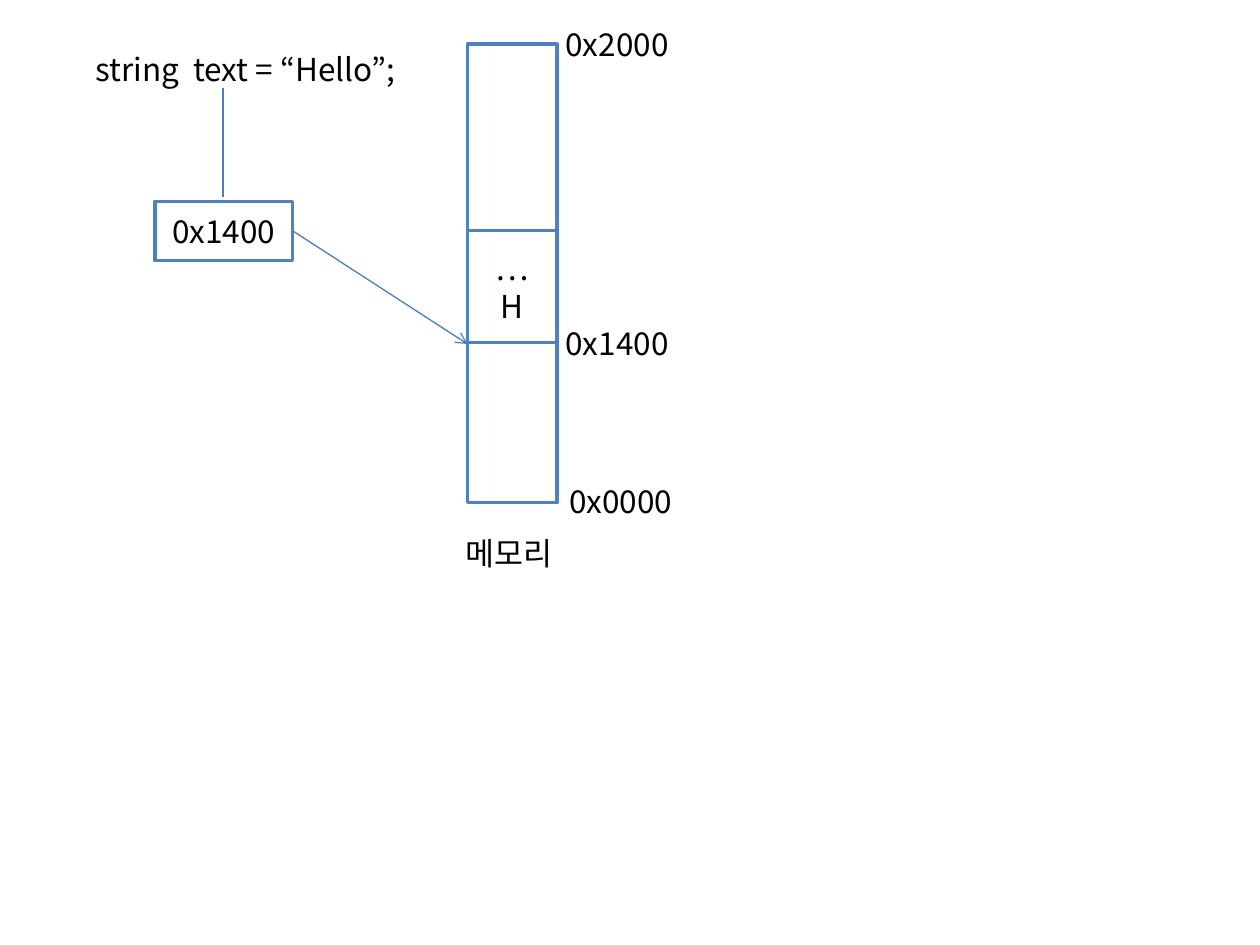
"""Draw a string variable pointing at its characters in memory."""
from dataclasses import dataclass

from lxml import etree
from pptx import Presentation
from pptx.dml.color import RGBColor
from pptx.enum.shapes import MSO_CONNECTOR, MSO_SHAPE
from pptx.enum.text import MSO_ANCHOR, MSO_AUTO_SIZE, PP_ALIGN
from pptx.oxml.ns import qn
from pptx.util import Emu, Pt

RECT = MSO_SHAPE.RECTANGLE
STRAIGHT = MSO_CONNECTOR.STRAIGHT
MIDDLE = MSO_ANCHOR.MIDDLE
CENTER = PP_ALIGN.CENTER
GROW = MSO_AUTO_SIZE.SHAPE_TO_FIT_TEXT
PX = 9144


@dataclass(frozen=True)
class Theme:
    font: str = "Noto Sans CJK KR"
    size: int = 18
    text: str = "000000"
    fill: str = "FFFFFF"
    border: str = "4F81BD"
    link: str = "4B7EBC"
    border_width: float = 2
    link_width: float = 0.75


class Diagram:
    def __init__(self, slide, theme):
        self.s = slide
        self.theme = theme

    def set_text(self, tf, text):
        tf.text = text
        for p in tf.paragraphs:
            for r in p.runs:
                r.font.size = Pt(self.theme.size)
                r.font.name = self.theme.font
                r.font.color.rgb = RGBColor.from_string(self.theme.text)
                rpr = r.font._element
                etree.SubElement(rpr, qn("a:ea"), typeface=self.theme.font)

    def stroke(self, line, color, width):
        line.color.rgb = RGBColor.from_string(color)
        line.width = Pt(width)

    def label(self, text, x, y, w=134, h=40):
        sp = self.s.shapes.add_textbox(*(Emu(v * PX) for v in (x, y, w, h)))
        tf = sp.text_frame
        tf.word_wrap = True
        tf.auto_size = GROW
        self.set_text(tf, text)

    def box(self, x, y, w, h, text=""):
        sp = self.s.shapes.add_shape(RECT, *(Emu(v * PX) for v in (x, y, w, h)))
        sp.shadow.inherit = False
        sp.fill.solid()
        sp.fill.fore_color.rgb = RGBColor.from_string(self.theme.fill)
        self.stroke(sp.line, self.theme.border, self.theme.border_width)
        if text:
            tf = sp.text_frame
            tf.vertical_anchor = MIDDLE
            self.set_text(tf, text)
            for p in tf.paragraphs:
                p.alignment = CENTER

    def link(self, x1, y1, x2, y2, arrow=False):
        ends = (Emu(v * PX) for v in (x1, y1, x2, y2))
        cxn = self.s.shapes.add_connector(STRAIGHT, *ends)
        self.stroke(cxn.line, self.theme.link, self.theme.link_width)
        sp_pr = cxn._element.spPr
        if arrow:
            etree.SubElement(sp_pr.find(qn("a:ln")), qn("a:tailEnd"), type="arrow")
        etree.SubElement(sp_pr, qn("a:effectLst"))


def main():
    prs = Presentation()
    prs.slide_width = Emu(1000 * PX)
    prs.slide_height = Emu(750 * PX)
    d = Diagram(prs.slides.add_slide(prs.slide_layouts[6]), Theme())

    mem_x, mem_w = 371, 71
    d.label("0x0000", 442, 378)
    d.box(mem_x, 35, mem_w, 364)
    d.label("string  text = “Hello”;", 66, 35, w=316)
    d.box(mem_x, 183, mem_w, 89, "…\vH")
    d.label("메모리", 360, 419)

    d.link(177, 70, 177, 156)
    d.link(232, 183, mem_x, 273, arrow=True)
    d.box(123, 160, 109, 47, "0x1400")

    for address, y in (("0x2000", 15), ("0x1400", 252)):
        d.label(address, 439, y)

    prs.save("out.pptx")


if __name__ == "__main__":
    main()
